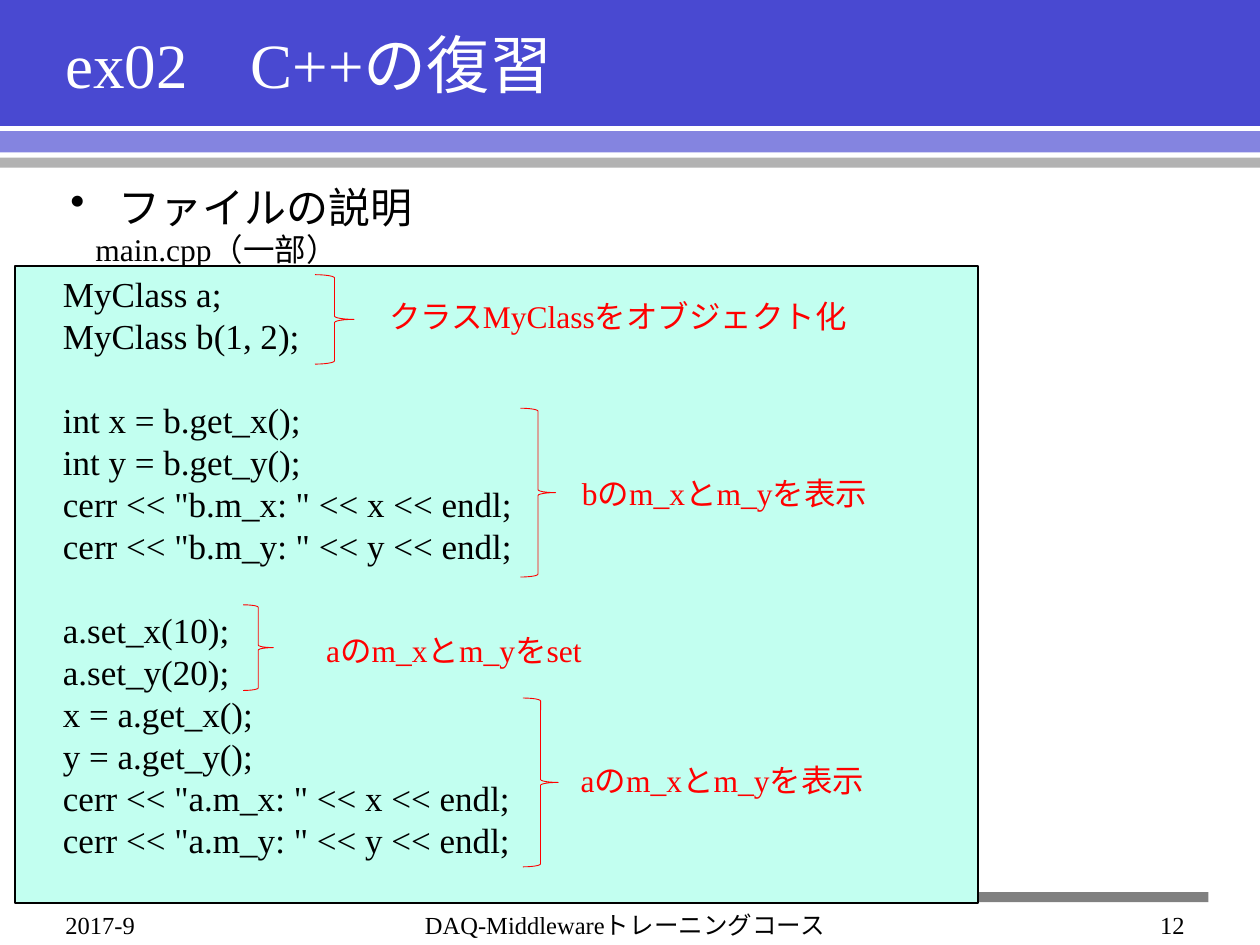
from lxml import etree
from pptx import Presentation
from pptx import util as u
from pptx.dml.color import RGBColor
from pptx.enum import shapes, text
from pptx.oxml import ns

BLUE = RGBColor(0x49, 0x49, 0xD1)
PALE = RGBColor(0x84, 0x84, 0xE0)
SILVER = RGBColor(0xB2, 0xB2, 0xB2)
GRAY = RGBColor(0x80, 0x80, 0x80)
MINT = RGBColor(0xC2, 0xFF, 0xF0)
RED = RGBColor(0xFF, 0, 0)
BLACK = RGBColor(0, 0, 0)
WHITE = RGBColor(0xFF, 0xFF, 0xFF)
LEFT, MID, RIGHT = text.PP_ALIGN.LEFT, text.PP_ALIGN.CENTER, text.PP_ALIGN.RIGHT


class Deck:
    font = "Times New Roman"

    def __init__(self, wide, high):
        self.prs = Presentation()
        self.prs.slide_width = u.Inches(wide)
        self.prs.slide_height = u.Inches(high)
        self.slide = self.prs.slides.add_slide(self.prs.slide_layouts[6])

    def shape(self, kind, box, fill=None, line=None, width=1):
        item = self.slide.shapes.add_shape(kind, *map(u.Inches, box))
        item.shadow.inherit = False
        if fill is None:
            item.fill.background()
        else:
            item.fill.solid()
            item.fill.fore_color.rgb = fill
        if line is None:
            item.line.fill.background()
        else:
            item.line.color.rgb = line
            item.line.width = u.Pt(width)
        return item

    def rect(self, box, fill, line=None):
        return self.shape(shapes.MSO_SHAPE.RECTANGLE, box, fill, line)

    def brace(self, box):
        return self.shape(shapes.MSO_SHAPE.RIGHT_BRACE, box, line=RED, width=0.5)

    def style(self, frame, size, color, align=LEFT):
        frame.word_wrap = True
        for para in frame.paragraphs:
            para.alignment = align
            for run in para.runs:
                run.font.name = self.font
                run.font.size = u.Pt(size)
                run.font.color.rgb = color

    def label(self, box, words, size, color=BLACK, align=LEFT,
              anchor=text.MSO_ANCHOR.TOP):
        frame = self.slide.shapes.add_textbox(*map(u.Inches, box)).text_frame
        frame.text = words
        frame.vertical_anchor = anchor
        self.style(frame, size, color, align)
        return frame

    def bullet(self, box, words, size):
        frame = self.label(box, words, size)
        props = frame.paragraphs[0]._p.get_or_add_pPr()
        props.set("marL", str(u.Inches(0.38)))
        props.set("indent", str(u.Inches(-0.38)))
        mark = etree.SubElement(props, ns.qn("a:buChar"))
        mark.set("char", "•")

    def code(self, box, groups, size):
        frame = self.rect(box, MINT, BLACK).text_frame
        frame.text = "\n".join(groups)
        frame.vertical_anchor = text.MSO_ANCHOR.TOP
        frame.margin_left = u.Inches(0.38)
        self.style(frame, size, BLACK)
        # Each group after the first starts one line lower
        start = 0
        for group in groups:
            if start:
                frame.paragraphs[start].space_before = u.Pt(size * 1.2)
            start += len(group.split("\n"))


CODE = [
    "MyClass a;\nMyClass b(1, 2);",
    """int x = b.get_x();
int y = b.get_y();
cerr << "b.m_x: " << x << endl;
cerr << "b.m_y: " << y << endl;""",
    """a.set_x(10);
a.set_y(20);
x = a.get_x();
y = a.get_y();
cerr << "a.m_x: " << x << endl;
cerr << "a.m_y: " << y << endl;""",
]

# Brace box, label left and top, label words
NOTES = [
    ((2.5, 2.18, 0.31, 0.71), (2.99, 2.31), "クラスMyClassをオブジェクト化"),
    ((4.13, 3.24, 0.28, 1.34), (4.52, 3.71), "bのm_xとm_yを表示"),
    ((1.93, 4.8, 0.24, 0.68), (2.49, 4.96), "aのm_xとm_yをset"),
    ((4.15, 5.54, 0.28, 1.34), (4.51, 5.99), "aのm_xとm_yを表示"),
]


def main():
    deck = Deck(10, 7.5)

    # Header bands and footer rule
    deck.rect((0, 0, 10, 1), BLUE)
    deck.rect((0, 1.04, 10, 0.17), PALE)
    deck.rect((0, 1.25, 10, 0.08), SILVER)
    deck.rect((0.42, 7.08, 9.17, 0.08), GRAY)

    # Title and topic
    deck.label((0.42, 0, 9.31, 1), "ex02\u3000C++の復習".replace("\u3000", "　"), 36, WHITE,
               anchor=text.MSO_ANCHOR.MIDDLE)
    deck.bullet((0.46, 1.39, 3.83, 5.53), "ファイルの説明", 24)

    # Footer
    deck.label((0.42, 7.17, 2.08, 0.33), "2017-9", 14)
    deck.label((3.11, 7.17, 3.7, 0.33), "DAQ-Middlewareトレーニングコース", 14, align=MID)
    deck.label((7.42, 7.17, 2.08, 0.33), "12", 14, align=RIGHT)

    # Code listing
    deck.label((0.66, 1.78, 3.43, 0.4), "main.cpp（一部）", 18)
    deck.code((0.12, 2.11, 7.64, 5.06), CODE, 20)

    # Notes beside the code
    for box, spot, words in NOTES:
        deck.brace(box)
        deck.label((*spot, 4.06, 0.4), words, 18, RED)

    deck.prs.save("out.pptx")


if __name__ == "__main__":
    main()
